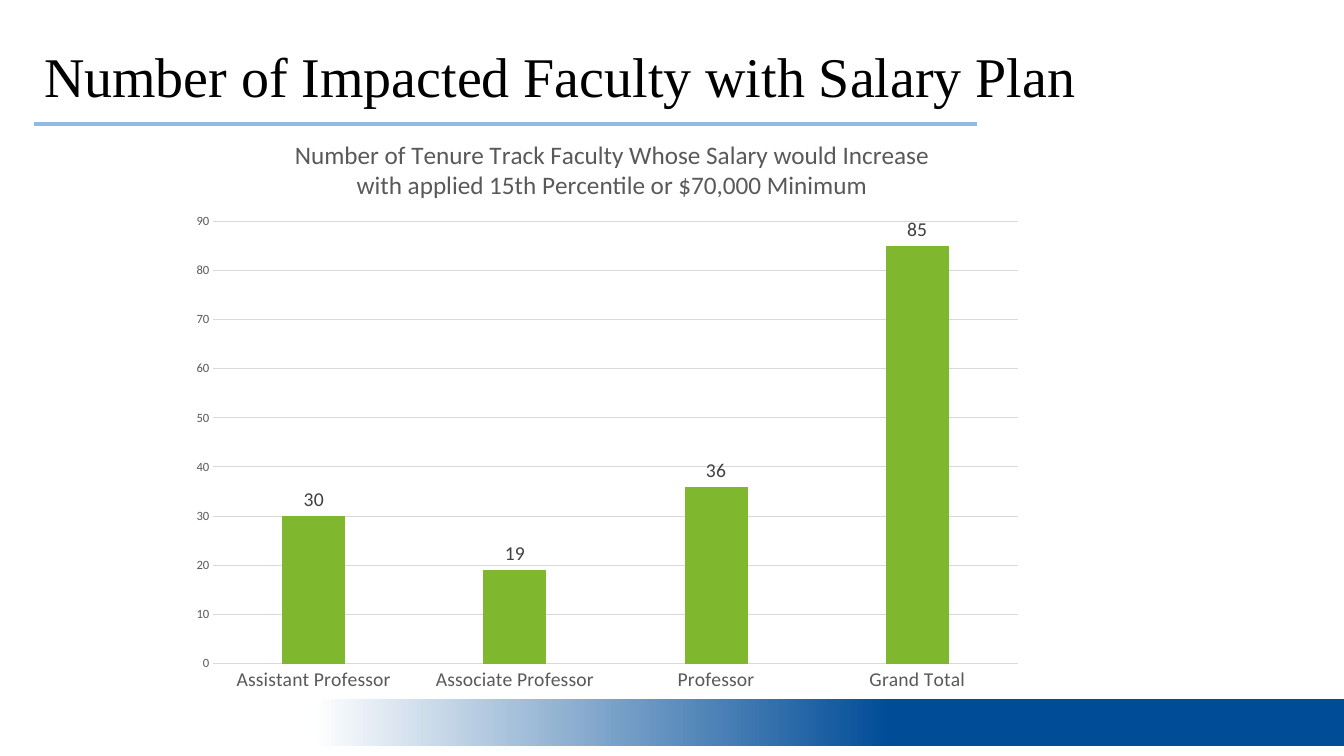
from lxml import etree
from pptx import Presentation
from pptx import util as u
from pptx.chart.data import CategoryChartData
from pptx.dml.color import RGBColor
from pptx.enum import chart as charts, shapes, text
from pptx.oxml import parse_xml
from pptx.oxml.ns import nsdecls, qn

PX = 914400 / 100.8  # EMU per pixel


class Theme:
    heading_font, chart_font = "Times New Roman", "Calibri"
    black, navy, white = "000000", "004C97", "FFFFFF"
    rule, bar, grid = "8DBAE6", "7FB82F", "D9D9D9"
    muted, label = "595959", "404040"
    title_size, chart_title_size, label_size, tick_size = 40, 18, 14, 9
    rule_width, grid_width = 2.25, 0.75


def px(*lengths):
    return [u.Emu(round(length * PX)) for length in lengths]


def style_font(font, size, color, name=Theme.chart_font):
    font.name, font.size, font.bold = name, u.Pt(size), False
    font.color.rgb = RGBColor.from_string(color)


def style_line(line, color, width):
    line.color.rgb = RGBColor.from_string(color)
    line.width = u.Pt(width)


def set_layout(element, **fractions):
    """Fix a chart part at fractions of the chart's size."""
    for old in element.findall(qn("c:layout")):
        element.remove(old)
    target = '<c:layoutTarget val="inner"/>' if "w" in fractions else ""
    modes = "".join(f'<c:{key}Mode val="edge"/>' for key in "xy")
    values = "".join(f'<c:{key} val="{value}"/>' for key, value in fractions.items())
    layout = parse_xml(f'<c:layout {nsdecls("c")}><c:manualLayout>{target}{modes}'
                       f'{values}</c:manualLayout></c:layout>')
    element.insert(1 if element.tag == qn("c:title") else 0, layout)


# Title with the rule below it
def add_heading(slide, left, top, width, height):
    title = slide.shapes.title
    title.left, title.top, title.width, title.height = px(left, top, width, height)
    frame = title.text_frame
    frame.text = "Number of Impacted Faculty with Salary Plan"
    frame.word_wrap = True
    frame.auto_size = text.MSO_AUTO_SIZE.NONE
    frame.vertical_anchor = text.MSO_ANCHOR.MIDDLE
    paragraph = frame.paragraphs[0]
    paragraph.alignment = text.PP_ALIGN.LEFT
    paragraph.line_spacing = 0.9
    style_font(paragraph.font, Theme.title_size, Theme.black, Theme.heading_font)

    rule_y = top + height - 11
    rule = slide.shapes.add_connector(
        shapes.MSO_CONNECTOR.STRAIGHT, *px(left + 943, rule_y, left, rule_y))
    style_line(rule.line, Theme.rule, Theme.rule_width)
    etree.SubElement(rule._element.spPr, qn("a:effectLst"))


# Footer band fading to white on the left
def add_footer_band(slide, left, top, width, height):
    band = slide.shapes.add_shape(
        shapes.MSO_SHAPE.RECTANGLE, *px(left, top, width, height))
    band.shadow.inherit = False
    band.line.fill.background()
    band.fill.gradient()
    band.fill.gradient_angle = 180
    stops = ((0.44, Theme.navy), (1, Theme.white))
    for stop, (position, color) in zip(band.fill.gradient_stops, stops):
        stop.position = position
        stop.color.rgb = RGBColor.from_string(color)


# Column chart of faculty counts
def add_faculty_chart(slide, left, top, width, height):
    data = CategoryChartData()
    data.categories = ["Assistant Professor", "Associate Professor",
                       "Professor", "Grand Total"]
    data.add_series("Series 1", (30, 19, 36, 85))
    chart = slide.shapes.add_chart(charts.XL_CHART_TYPE.COLUMN_CLUSTERED,
                                   *px(left, top, width, height), data).chart
    style_font(chart.font, 10, Theme.black)
    chart.has_legend = False

    chart.has_title = True
    chart_title = chart.chart_title
    chart_title.include_in_layout = False
    chart_title.text_frame.text = (
        "Number of Tenure Track Faculty Whose Salary would Increase "
        "with applied 15th Percentile or $70,000 Minimum")
    style_font(chart_title.text_frame.paragraphs[0].font,
               Theme.chart_title_size, Theme.muted)
    set_layout(chart_title._element, x=0.13, y=0.03)
    set_layout(chart._chartSpace.chart.plotArea, x=0.04, y=0.18, w=0.94, h=0.75)

    for axis, size in ((chart.category_axis, Theme.label_size),
                       (chart.value_axis, Theme.tick_size)):
        axis.major_tick_mark = axis.minor_tick_mark = charts.XL_TICK_MARK.NONE
        style_font(axis.tick_labels.font, size, Theme.muted)
    style_line(chart.category_axis.format.line, Theme.grid, Theme.grid_width)
    values = chart.value_axis
    values.minimum_scale, values.maximum_scale, values.major_unit = 0, 90, 10
    values.format.line.fill.background()
    style_line(values.major_gridlines.format.line, Theme.grid, Theme.grid_width)

    plot = chart.plots[0]
    plot.gap_width, plot.overlap, plot.vary_by_categories = 219, -27, False
    series = plot.series[0]
    series.format.fill.solid()
    series.format.fill.fore_color.rgb = RGBColor.from_string(Theme.bar)
    labels = series.data_labels
    labels.show_value = True
    labels.position = charts.XL_LABEL_POSITION.OUTSIDE_END
    style_font(labels.font, Theme.label_size, Theme.label)


def main():
    presentation = Presentation()
    presentation.slide_width, presentation.slide_height = px(1344, 756)
    slide = presentation.slides.add_slide(presentation.slide_layouts[5])
    add_heading(slide, 34, 23, 1159, 112)
    add_footer_band(slide, 313, 699, 1031, 47)
    add_faculty_chart(slide, 179, 115, 856, 590)
    presentation.save("out.pptx")


if __name__ == "__main__":
    main()
